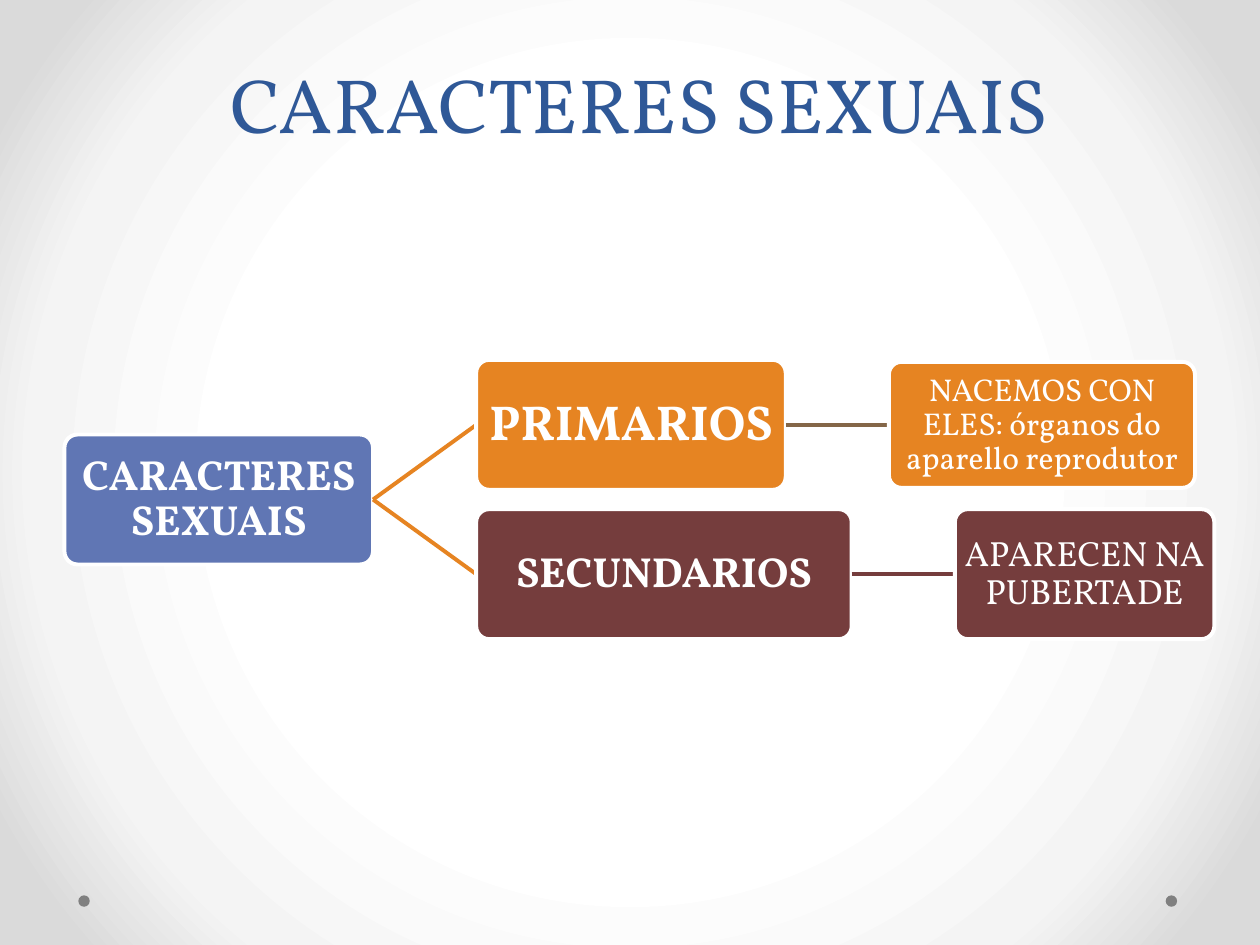
import pptx
import pptx.util
import pptx.dml.color
import pptx.enum.shapes
import pptx.enum.text
import pptx.oxml
import pptx.oxml.ns
from lxml import etree

Cm, Pt = pptx.util.Cm, pptx.util.Pt
RGBColor = pptx.dml.color.RGBColor
SHAPE = pptx.enum.shapes.MSO_SHAPE
ANCHOR = pptx.enum.text.MSO_ANCHOR
CENTER = pptx.enum.text.PP_ALIGN.CENTER
qn = pptx.oxml.ns.qn

WHITE = RGBColor(0xFF, 0xFF, 0xFF)
NAVY = RGBColor(0x2F, 0x58, 0x97)
BLUE = RGBColor(0x60, 0x76, 0xB4)
ORANGE = RGBColor(0xE6, 0x84, 0x22)
BROWN = RGBColor(0x84, 0x66, 0x48)
MAROON = RGBColor(0x75, 0x3D, 0x3D)
GRAY = RGBColor(0x80, 0x80, 0x80)
FONT = "Vollkorn"

# Content: each box has text, width, height, fill, size, bold
TITLE = "CARACTERES SEXUAIS"
ROOT = ("CARACTERES SEXUAIS", 6.22, 2.62, BLUE, 24, True)
# Category, its description, colour of the link between them
BRANCHES = [
    (("PRIMARIOS", 6.24, 2.62, ORANGE, 28, True),
     ("NACEMOS CON ELES: órganos do aparello reprodutor", 6.17, 2.54, ORANGE, 18, False),
     BROWN),
    (("SECUNDARIOS", 7.57, 2.62, MAROON, 24, True),
     ("APARECEN NA PUBERTADE", 5.23, 2.62, MAROON, 20, False),
     MAROON),
]
BACKDROP = [(50, "FFFFFF"), (76, "F4F4F4"), (92, "DADADA")]

# Tree layout in centimetres
TREE_LEFT, TREE_MIDDLE = 1.3, 10.07
COLUMN_GAP, BRANCH_PITCH = 2.08, 3.01


def add_words(paragraph, words, size, color, bold=False):
    paragraph.alignment = CENTER
    run = paragraph.add_run()
    run.text = words
    run.font.name, run.font.size, run.font.bold = FONT, Pt(size), bold
    run.font.color.rgb = color


def add_box(slide, box, left, middle):
    """Draw a tree box and return its right edge."""
    words, width, height, color, size, bold = box
    card = slide.shapes.add_shape(SHAPE.ROUNDED_RECTANGLE, Cm(left),
                                  Cm(middle - height / 2), Cm(width), Cm(height))
    card.adjustments[0] = 0.1
    card.shadow.inherit = False
    card.fill.solid()
    card.fill.fore_color.rgb = color
    card.line.color.rgb = WHITE
    card.line.width = Pt(2.25)
    frame = card.text_frame
    frame.word_wrap = True
    frame.vertical_anchor = ANCHOR.MIDDLE
    inset = Cm(0.05 if bold else 0.03)
    frame.margin_left = frame.margin_right = inset
    frame.margin_top = frame.margin_bottom = inset
    paragraph = frame.paragraphs[0]
    paragraph.line_spacing = 0.9
    add_words(paragraph, words, size, WHITE, bold)
    return left + width


def add_link(slide, left, start, end, color):
    """Join two columns and return the left edge of the next one."""
    right = left + COLUMN_GAP
    link = slide.shapes.add_connector(pptx.enum.shapes.MSO_CONNECTOR.STRAIGHT,
                                      Cm(left), Cm(start), Cm(right), Cm(end))
    link.line.color.rgb = color
    link.line.width = Pt(2.25)
    etree.SubElement(link._element.spPr, qn("a:effectLst"))
    return right


def paint_background(slide):
    slide.background.fill.gradient()
    old = slide.element.find(".//" + qn("a:gradFill"))
    stops = "".join(f'<a:gs pos="{pos * 1000}"><a:srgbClr val="{color}"/></a:gs>'
                    for pos, color in BACKDROP)
    old.getparent().replace(old, pptx.oxml.parse_xml(
        f'<a:gradFill {pptx.oxml.ns.nsdecls("a")} rotWithShape="1">'
        f'<a:gsLst>{stops}</a:gsLst><a:path path="circle">'
        '<a:fillToRect l="50000" t="50000" r="50000" b="50000"/>'
        '</a:path></a:gradFill>'))


def main():
    deck = pptx.Presentation()
    deck.slide_width, deck.slide_height = Cm(25.4), Cm(19.05)
    slide = deck.slides.add_slide(deck.slide_layouts[5])
    paint_background(slide)

    # Corner dots
    for left in (23.5, 1.58):
        dot = slide.shapes.add_shape(SHAPE.OVAL, Cm(left), Cm(18.05), Cm(0.23), Cm(0.23))
        dot.shadow.inherit = False
        dot.fill.solid()
        dot.fill.fore_color.rgb = GRAY
        dot.line.fill.background()

    # Title
    title = slide.shapes.title
    title.left, title.top, title.width, title.height = Cm(2.31), Cm(0.53), Cm(21.16), Cm(2.59)
    title.text_frame.vertical_anchor = ANCHOR.BOTTOM
    heading = title.text_frame.paragraphs[0]
    heading.line_spacing = Pt(58)
    add_words(heading, TITLE, 44, NAVY)

    # Tree
    root_right = add_box(slide, ROOT, TREE_LEFT, TREE_MIDDLE)
    for row, (category, description, link_color) in enumerate(BRANCHES):
        middle = TREE_MIDDLE + (row - (len(BRANCHES) - 1) / 2) * BRANCH_PITCH
        left = add_link(slide, root_right, TREE_MIDDLE, middle, ORANGE)
        right = add_box(slide, category, left, middle)
        left = add_link(slide, right, middle, middle, link_color)
        add_box(slide, description, left, middle)

    deck.save("out.pptx")


if __name__ == "__main__":
    main()
